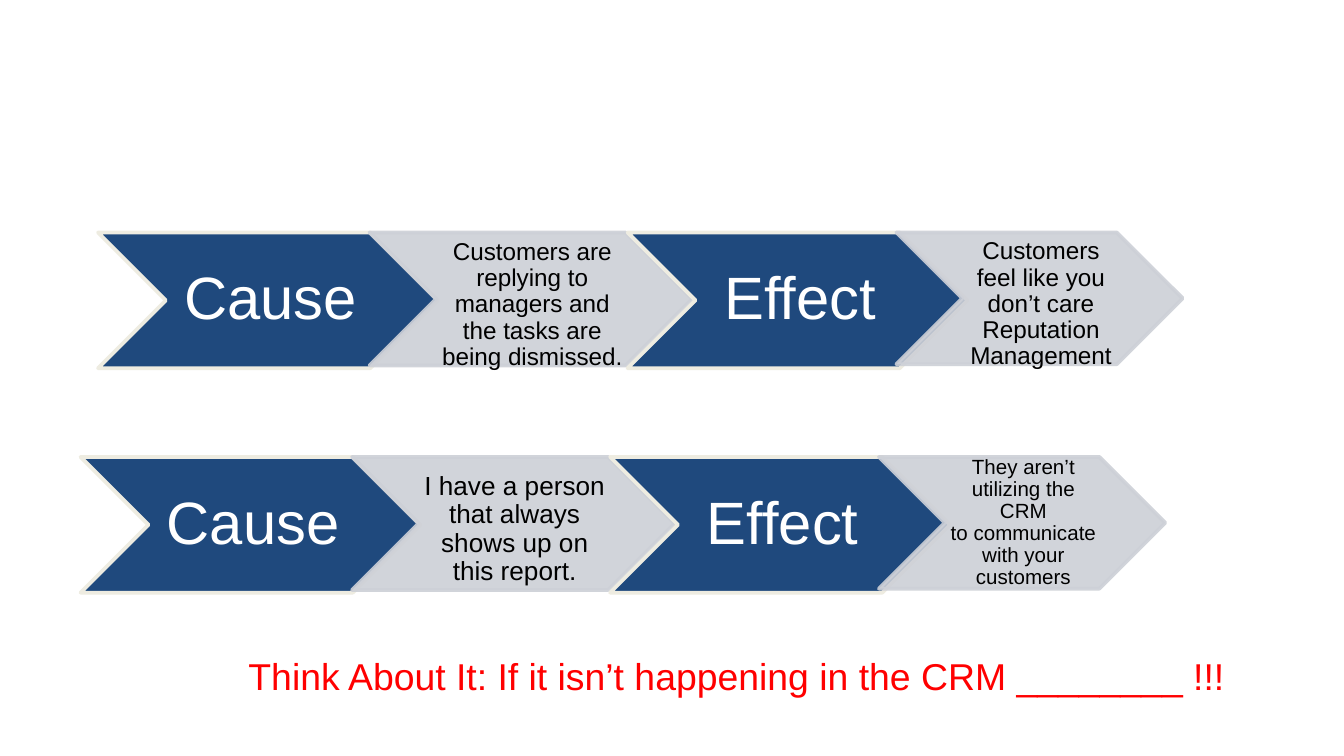
"""Build a slide with two cause-and-effect chevron chains and a closing question."""
from lxml import etree
from pptx import Presentation
from pptx import util as u
from pptx.dml.color import RGBColor
from pptx.enum import shapes, text
from pptx.oxml import ns

THEME = {
    "font": "Arial",
    "label": {"fill": "1F497D", "line": "EEECE1", "font": "FFFFFF", "opacity": 100, "insets": (0.04, 0.02, 0, 0.02)},
    "detail": {"fill": "CDD0D7", "line": "CDD0D7", "font": "000000", "opacity": 90, "insets": (0.02, 0.01, 0, 0.01)},
    "border": 2,
    "label_size": 32,
    "question_size": 20,
    "question_color": "FF0000",
}
SLIDE_WIDTH = 10
SLIDE_HEIGHT = SLIDE_WIDTH * 9 / 16
COLUMNS = [
    {"offset": 0, "width": 2.53, "height": 1.01, "style": "label"},
    {"offset": 2.02, "width": 2.4, "height": 0.99, "style": "detail"},
    {"offset": 3.94, "width": 2.53, "height": 1.01, "style": "label"},
    {"offset": 5.94, "width": 2.13, "height": 0.98, "style": "detail"},
]
CHAINS = [
    {"left": 0.73, "top": 1.73, "size": 13, "end_size": 13, "drop": 0.09, "end_drop": 0.09, "steps": [
        "Cause",
        "Customers are replying to\nmanagers and the tasks are\nbeing dismissed.",
        "Effect",
        "Customers feel like you\ndon’t care\nReputation Management",
    ]},
    {"left": 0.6, "top": 3.4, "size": 14, "end_size": 11, "drop": 0.09, "end_drop": 0, "steps": [
        "Cause",
        "I have a person that always\nshows up on this report.",
        "Effect",
        "They aren’t utilizing the CRM\nto communicate with your\ncustomers",
    ]},
]
QUESTION = "Think About It: If it isn’t happening in the CRM ________ !!!"
QUESTION_BOX = (1.75, 4.81, 7.75, 0.56)


def inches(values):
    return [u.Inches(value) for value in values]


def write(text_frame, wording, size, color):
    text_frame.word_wrap = True
    paragraph = text_frame.paragraphs[0]
    paragraph.text = wording
    for run in paragraph.runs:
        run.font.name = THEME["font"]
        run.font.size = u.Pt(size)
        run.font.color.rgb = RGBColor.from_string(color)
    return paragraph


def add_chevron(group, box, wording, size, style, drop):
    shape = group.shapes.add_shape(shapes.MSO_SHAPE.CHEVRON, *inches(box))
    shape.shadow.inherit = False
    shape.fill.solid()
    shape.fill.fore_color.rgb = RGBColor.from_string(style["fill"])
    shape.line.color.rgb = RGBColor.from_string(style["line"])
    shape.line.width = u.Pt(THEME["border"])
    if style["opacity"] < 100:
        for color in shape._element.spPr.iter(ns.qn("a:srgbClr")):
            etree.SubElement(color, ns.qn("a:alpha"), val=str(style["opacity"] * 1000))
    frame = shape.text_frame
    left, top, right, bottom = style["insets"]
    frame.margin_left, frame.margin_top, frame.margin_right, frame.margin_bottom = inches(
        (left, top + drop, right, bottom))
    frame.vertical_anchor = text.MSO_ANCHOR.MIDDLE
    paragraph = write(frame, wording, size, style["font"])
    paragraph.alignment = text.PP_ALIGN.CENTER
    paragraph.line_spacing = 0.9


def add_chain(slide, chain):
    group = slide.shapes.add_group_shape()
    label = (THEME["label_size"], 0)
    formats = [label, (chain["size"], chain["drop"]), label, (chain["end_size"], chain["end_drop"])]
    for column, wording, (size, drop) in zip(COLUMNS, chain["steps"], formats):
        box = (chain["left"] + column["offset"], chain["top"], column["width"], column["height"])
        add_chevron(group, box, wording, size, THEME[column["style"]], drop)


def main():
    presentation = Presentation()
    presentation.slide_width, presentation.slide_height = inches((SLIDE_WIDTH, SLIDE_HEIGHT))
    slide = presentation.slides.add_slide(presentation.slide_layouts[6])
    for chain in CHAINS:
        add_chain(slide, chain)
    question = slide.shapes.add_textbox(*inches(QUESTION_BOX))
    write(question.text_frame, QUESTION, THEME["question_size"], THEME["question_color"])
    presentation.save("out.pptx")


if __name__ == "__main__":
    main()
